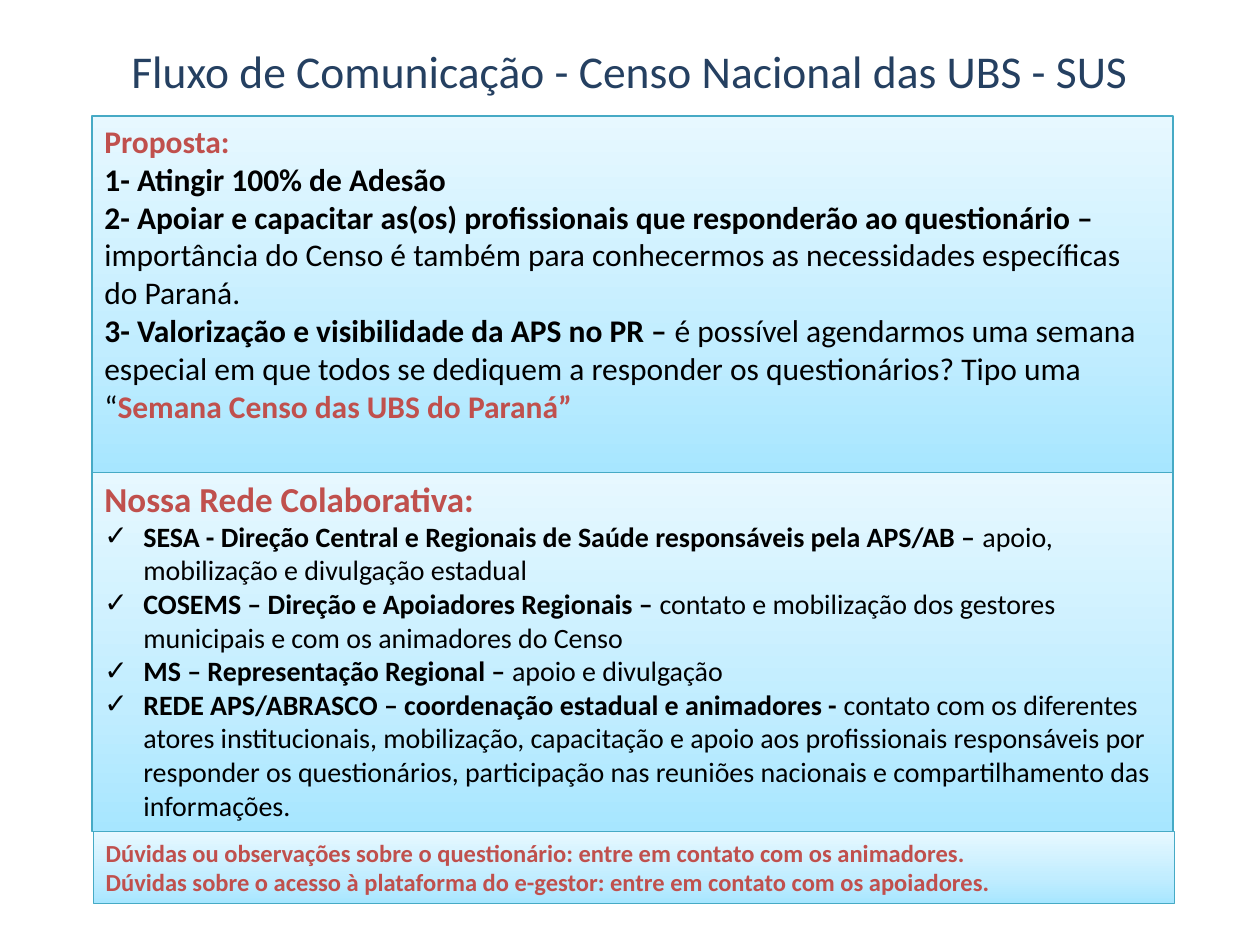
from copy import deepcopy

from lxml import etree
from pptx import Presentation
from pptx.dml.color import RGBColor
from pptx.enum import shapes, text
from pptx.oxml import ns
from pptx.util import Inches, Pt

FONT = "Calibri"
NAVY = RGBColor(0x25, 0x40, 0x61)
RED = RGBColor(0xC0, 0x50, 0x4D)
BLACK = RGBColor(0, 0, 0)
BORDER = RGBColor(0x46, 0xAA, 0xC5)
GRADIENT = [
    (0, RGBColor(0xA7, 0xE6, 0xFF)),
    (0.35, RGBColor(0xC1, 0xED, 0xFF)),
    (1, RGBColor(0xE7, 0xF8, 0xFF)),
]

TITLE = "Fluxo de Comunicação - Censo Nacional das UBS - SUS"
HEAD, BOLD, PLAIN = (RED, True), (BLACK, True), (BLACK, False)

NETWORK = [
    (20, False, [("Nossa Rede Colaborativa:", HEAD)]),
    (16, True, [
        ("SESA - Direção Central e Regionais de Saúde responsáveis pela APS/AB – ", BOLD),
        ("apoio, mobilização e divulgação estadual", PLAIN)]),
    (16, True, [
        ("COSEMS – Direção e Apoiadores Regionais – ", BOLD),
        ("contato e mobilização dos gestores municipais e com os animadores do Censo", PLAIN)]),
    (16, True, [
        ("MS – Representação Regional – ", BOLD),
        ("apoio e divulgação", PLAIN)]),
    (16, True, [
        ("REDE APS/ABRASCO – coordenação estadual e animadores - ", BOLD),
        ("contato com os diferentes atores institucionais, mobilização, capacitação e apoio "
         "aos profissionais responsáveis por responder os questionários, participação nas "
         "reuniões nacionais e compartilhamento das informações.", PLAIN)]),
]
PROPOSAL = [
    (18, False, [("Proposta:", HEAD)]),
    (18, False, [("1- Atingir 100% de Adesão", BOLD)]),
    (18, False, [
        ("2- Apoiar e capacitar as(os) profissionais que responderão ao questionário – ", BOLD),
        ("importância do Censo é também para conhecermos as necessidades específicas "
         "do Paraná.", PLAIN)]),
    (18, False, [
        ("3- Valorização e visibilidade da APS no PR – ", BOLD),
        ("é possível agendarmos uma semana especial em que todos se dediquem a responder "
         "os questionários? Tipo uma “", PLAIN),
        ("Semana Censo das UBS do Paraná”", HEAD)]),
]
QUESTIONS = [
    (14, False, [("Dúvidas ou observações sobre o questionário: "
                  "entre em contato com os animadores.", HEAD)]),
    (14, False, [("Dúvidas sobre o acesso à plataforma do e-gestor: "
                  "entre em contato com os apoiadores.", HEAD)]),
]
WIDTH = 8.58
PANELS = [
    (0.73, 3.74, 2.86, NETWORK),
    (0.73, 0.92, 2.83, PROPOSAL),
    (0.74, 6.6, 0.57, QUESTIONS),
]


def style_run(r, size, color, bold):
    r.font.name = FONT
    r.font.size = Pt(size)
    r.font.bold = bold
    r.font.color.rgb = color


def add_check(p):
    pPr = p._p.get_or_add_pPr()
    pPr.set("marL", str(Inches(0.31)))
    pPr.set("indent", str(Inches(-0.31)))
    etree.SubElement(pPr, ns.qn("a:buFont"), typeface="Arial")
    etree.SubElement(pPr, ns.qn("a:buChar"), char="✓")


def fill_gradient(fill):
    fill.gradient()
    fill.gradient_angle = 90
    gs_list = fill._xPr.find(ns.qn("a:gradFill")).find(ns.qn("a:gsLst"))
    gs_list.append(deepcopy(gs_list[0]))
    for stop, (position, color) in zip(fill.gradient_stops, GRADIENT):
        stop.position = position
        stop.color.rgb = color


def add_panel(s, left, top, height, paragraphs):
    sp = s.shapes.add_shape(shapes.MSO_SHAPE.RECTANGLE, Inches(left), Inches(top),
                            Inches(WIDTH), Inches(height))
    sp.shadow.inherit = False
    fill_gradient(sp.fill)
    sp.line.color.rgb = BORDER
    sp.line.width = Pt(0.75)
    tf = sp.text_frame
    tf.word_wrap = True
    tf.vertical_anchor = text.MSO_ANCHOR.TOP
    for i, (size, checked, runs) in enumerate(paragraphs):
        p = tf.add_paragraph() if i else tf.paragraphs[0]
        p.alignment = text.PP_ALIGN.LEFT
        if checked:
            add_check(p)
        for words, (color, bold) in runs:
            r = p.add_run()
            r.text = words
            style_run(r, size, color, bold)


def main():
    prs = Presentation()
    prs.slide_width, prs.slide_height = Inches(10), Inches(7.5)
    s = prs.slides.add_slide(prs.slide_layouts[5])

    title = s.shapes.title
    title.left, title.top = Inches(0.59), Inches(0.29)
    title.width, title.height = Inches(8.82), Inches(0.71)
    tf = title.text_frame
    tf.text = TITLE
    tf.vertical_anchor = text.MSO_ANCHOR.TOP
    p = tf.paragraphs[0]
    p.alignment = text.PP_ALIGN.CENTER
    style_run(p.runs[0], 26, NAVY, False)

    for panel in PANELS:
        add_panel(s, *panel)
    prs.save("out.pptx")


if __name__ == "__main__":
    main()
